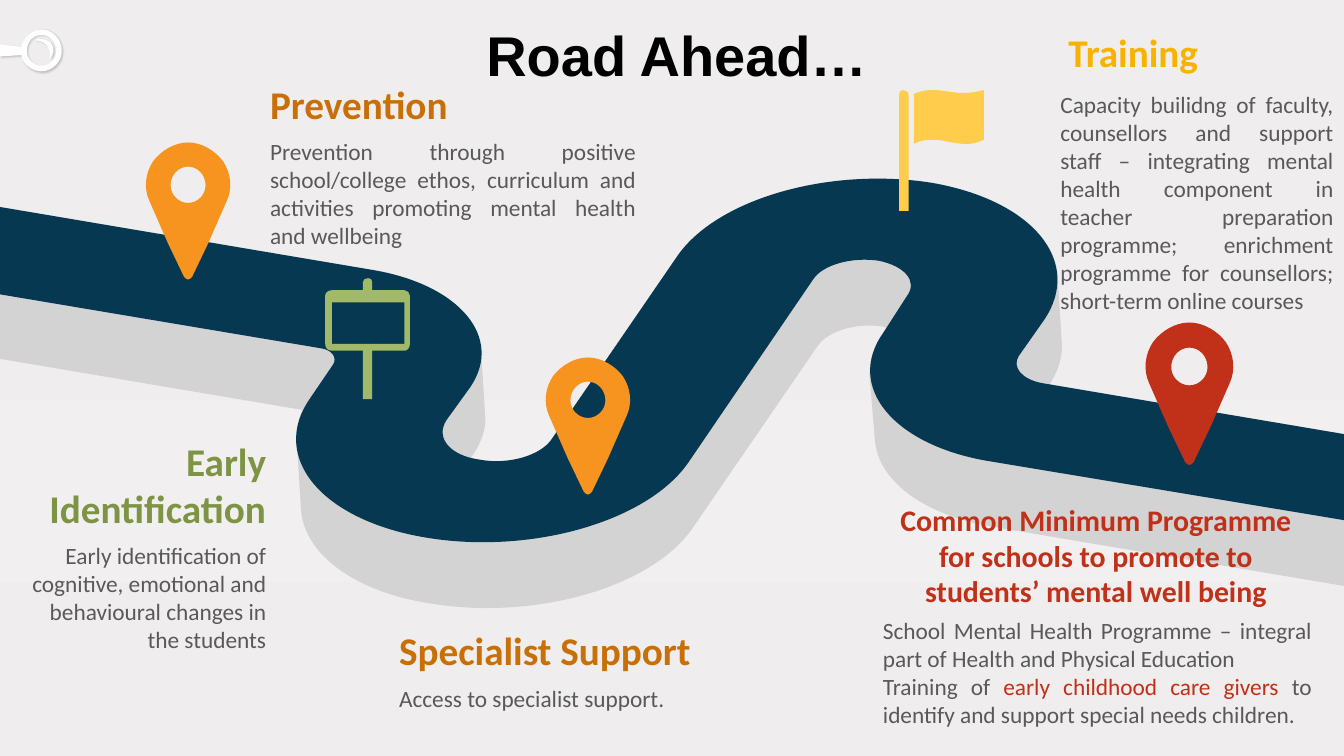
from dataclasses import dataclass

from pptx import Presentation
from pptx.dml.color import RGBColor
from pptx.enum.text import MSO_ANCHOR, PP_ALIGN
from pptx.oxml import parse_xml
from pptx.oxml.ns import nsdecls, qn
from pptx.util import Pt

COLOURS = {
    "road": "063951", "road_side": "D3D3D3", "orange": "F7931F", "red": "C13018",
    "sign": "A2B969", "flag": "FFCC4C", "white": "FFFFFF", "black": "000000",
    "brown": "C96F07", "yellow": "F8B200", "green": "7E9445", "body": "595959",
    "key_shadow": "808080",
}
BACKDROP = [(0, "EFEDEE"), (53, "F1EFF0"), (77, "EFEDEE"), (100, "EFEBEC")]
GRID = Pt(0.72)  # outlines are drawn on a grid of 0.72 points
HEADING_SIZE, BODY_SIZE = 21, 12.5

# An outline is a list of contours; a contour is a start point followed by
# lines (x, y) and Bezier curves (x1, y1, x2, y2, x, y).
Contour = list[tuple[float, ...]]

ROAD_SIDE: list[Contour] = [[
    (1000, 323), (781, 286), (788, 275, 791, 264, 790, 254), (787, 205),
    (785, 174, 750, 146, 693, 136), (618, 124, 532, 148, 503, 192), (412, 326),
    (403, 339, 379, 346, 357, 342), (355, 342, 352, 341, 350, 341), (353, 337),
    (359, 327, 362, 318, 361, 309), (358, 260), (356, 233, 326, 209, 278, 201),
    (0, 154), (0, 267), (225, 305), (221, 314, 220, 322, 221, 330), (224, 379),
    (226, 411, 262, 440, 320, 449), (398, 462, 486, 437, 516, 392), (608, 258),
    (616, 246, 637, 240, 657, 243), (658, 244, 659, 244, 660, 244), (657, 248),
    (650, 258, 647, 269, 647, 279), (651, 327), (653, 357, 686, 383, 739, 392),
    (1000, 436),
]]
ROAD: list[Contour] = [[
    (1000, 323), (775, 285), (760, 282, 753, 273, 758, 265), (777, 238),
    (806, 195, 769, 149, 693, 136), (617, 124, 532, 148, 503, 192), (411, 326),
    (403, 339, 378, 346, 357, 342), (335, 339, 324, 326, 332, 313), (350, 288),
    (375, 251, 342, 212, 278, 201), (0, 154), (0, 219), (238, 259),
    (247, 260, 251, 266, 248, 271), (231, 296), (200, 340, 239, 387, 317, 400),
    (395, 413, 483, 388, 513, 343), (605, 208), (612, 197, 634, 191, 654, 194),
    (673, 198, 683, 209, 675, 220), (657, 248), (629, 288, 665, 331, 735, 343),
    (1000, 387),
]]
PIN: list[Contour] = [
    [(0, 45), (-7, 45, -13, 39, -13, 32), (-13, 24, -7, 18, 0, 18),
     (7, 18, 13, 24, 13, 32), (13, 39, 7, 45, 0, 45)],
    [(0, 0), (-10, 0, -20, 6, -26, 14), (-32, 23, -33, 34, -29, 43), (-15, 75),
     (-3, 100), (-2, 101, -1, 102, 0, 102), (1, 102, 2, 101, 3, 100), (15, 75),
     (29, 43), (33, 34, 32, 23, 26, 14), (20, 6, 10, 0, 0, 0)],
]
SIGN: list[Contour] = [
    [(301, 256), (247, 256), (247, 225), (301, 225)],
    [(301, 216), (277, 216), (277, 210), (277, 208, 276, 207, 274, 207),
     (272, 207, 270, 208, 270, 210), (270, 216), (247, 216),
     (244, 216, 242, 218, 242, 220), (242, 256), (242, 259, 244, 261, 247, 261),
     (270, 261), (270, 297), (277, 297), (277, 261), (301, 261),
     (303, 261, 305, 259, 305, 256), (305, 220), (305, 218, 303, 216, 301, 216)],
]
FLAG_POLE: list[Contour] = [[
    (672, 67), (670, 67, 669, 69, 669, 70), (669, 157), (676, 157), (676, 70),
    (676, 69, 674, 67, 672, 67),
]]
FLAG_CLOTH: list[Contour] = [[
    (694, 67), (685, 67, 680, 70, 680, 70), (680, 107), (680, 107, 684, 104, 694, 104),
    (706, 104, 718, 111, 732, 104), (732, 67), (714, 72, 706, 67, 694, 67),
]]
KEY: list[Contour] = [
    [(30, 29), (33, 29, 36, 30, 38, 32), (41, 36, 40, 41, 37, 44),
     (38, 41, 37, 37, 35, 34), (33, 31, 29, 30, 26, 30), (27, 29, 29, 29, 30, 29)],
    [(31, 26), (25, 26, 20, 31, 20, 38), (20, 44, 25, 49, 31, 49),
     (37, 49, 42, 44, 42, 38), (42, 31, 37, 26, 31, 26)],
    [(31, 22), (39, 22, 46, 29, 46, 38), (46, 46, 39, 53, 31, 53),
     (24, 53, 17, 48, 16, 41), (0, 42), (0, 33), (16, 35), (17, 28, 24, 22, 31, 22)],
]


@dataclass
class Span:
    text: str
    colour: str = "body"


@dataclass
class TextBlock:
    left: float
    top: float
    width: float
    height: float
    paragraphs: list[list[Span]]
    align: PP_ALIGN = PP_ALIGN.LEFT
    anchor: MSO_ANCHOR = MSO_ANCHOR.TOP
    size: float = BODY_SIZE
    bold: bool = False
    font: str = "Calibri"
    line_spacing: float = 1.0
    insets: tuple[float, float] = (0, 3.6)  # left, top


def heading(left: float, top: float, width: float, height: float, text: str, colour: str,
            align: PP_ALIGN = PP_ALIGN.LEFT, size: float = HEADING_SIZE) -> TextBlock:
    return TextBlock(left, top, width, height, [[Span(text, colour)]], align,
                     MSO_ANCHOR.BOTTOM, size, True)


def bend_curves(shape, outline: list[Contour]) -> None:
    """Merge the three line segments of each curve into one Bezier segment."""
    track = shape._element.spPr.find(".//" + qn("a:path"))
    segments = iter(list(track))
    for contour in outline:
        next(segments)  # move to the start
        for step in contour[1:]:
            segment = next(segments)
            if len(step) == 6:
                curve = parse_xml(f'<a:cubicBezTo {nsdecls("a")}/>')
                segment.addprevious(curve)
                for line in (segment, next(segments), next(segments)):
                    curve.append(line[0])
                    track.remove(line)
        next(segments)  # close


def draw_outline(page, outline: list[Contour], colour: str, left: float = 0,
                 top: float = 0, scale: float = 1):
    builder = None
    for contour in outline:
        points = [((left + step[i] * scale) * GRID, (top + step[i + 1] * scale) * GRID)
                  for step in contour for i in range(0, len(step), 2)]
        if builder is None:
            builder = page.shapes.build_freeform(*points[0], scale=1.0)
        else:
            builder.move_to(*points[0])
        builder.add_line_segments(points[1:], close=True)
    shape = builder.convert_to_shape()
    bend_curves(shape, outline)
    shape.shadow.inherit = False
    shape.fill.solid()
    shape.fill.fore_color.rgb = RGBColor.from_string(COLOURS[colour])
    shape.line.fill.background()
    return shape


def draw_text(page, block: TextBlock) -> None:
    box = page.shapes.add_textbox(Pt(block.left), Pt(block.top), Pt(block.width), Pt(block.height))
    frame = box.text_frame
    frame.word_wrap = True
    frame.vertical_anchor = block.anchor
    frame.margin_left, frame.margin_top = (Pt(inset) for inset in block.insets)
    frame.margin_right, frame.margin_bottom = Pt(0), Pt(3.6)
    for index, spans in enumerate(block.paragraphs):
        para = frame.add_paragraph() if index else frame.paragraphs[0]
        para.alignment = block.align
        para.line_spacing = block.line_spacing
        for span in spans:
            run = para.add_run()
            run.text = span.text
            run.font.name, run.font.size, run.font.bold = block.font, Pt(block.size), block.bold
            run.font.color.rgb = RGBColor.from_string(COLOURS[span.colour])


def paint_backdrop(page) -> None:
    stops = "".join(f'<a:gs pos="{place * 1000}"><a:srgbClr val="{colour}"/></a:gs>'
                    for place, colour in BACKDROP)
    page._element.cSld.insert(0, parse_xml(
        f'<p:bg {nsdecls("p", "a")}><p:bgPr><a:gradFill><a:gsLst>{stops}</a:gsLst>'
        '<a:lin ang="5400000" scaled="0"/></a:gradFill><a:effectLst/></p:bgPr></p:bg>'))


def add_shadow(shape, colour: str) -> None:
    shape._element.spPr.find(qn("a:effectLst")).append(parse_xml(
        f'<a:outerShdw {nsdecls("a")} blurRad="{Pt(1)}" dist="{Pt(1)}" dir="2700000">'
        f'<a:srgbClr val="{COLOURS[colour]}"><a:alpha val="40000"/></a:srgbClr></a:outerShdw>'))


JUSTIFY, RIGHT, CENTER = PP_ALIGN.JUSTIFY, PP_ALIGN.RIGHT, PP_ALIGN.CENTER
TEXTS = [
    TextBlock(49.7, 9.4, 620.6, 43.9, [[Span("Road Ahead…", "black")]], CENTER,
              MSO_ANCHOR.MIDDLE, 30, True, "Arial", 0.9, (5, 2.9)),
    heading(144.7, 39.6, 195.8, 32.4, "Prevention", "brown"),
    TextBlock(144.7, 69.8, 195.8, 67.7, [[Span(
        "Prevention through positive school/college ethos, curriculum and activities "
        "promoting mental health and wellbeing")]], JUSTIFY),
    heading(572.4, 11.5, 147.6, 32.4, "Training", "yellow"),
    TextBlock(568.1, 44.6, 146.2, 128.2, [[Span(
        "Capacity builidng of faculty, counsellors and support staff – integrating mental "
        "health component in teacher preparation programme; enrichment programme for "
        "counsellors; short-term online courses")]], JUSTIFY),
    heading(17.3, 229.7, 125.3, 58.3, "Early Identification", "green", RIGHT),
    TextBlock(17.3, 286.6, 125.3, 67.7, [[Span(
        "Early identification of cognitive, emotional and  behavioural changes in the "
        "students")]], RIGHT),
    heading(472.3, 264.2, 229.7, 65.5, "Common Minimum Programme for schools to promote to "
            "students’ mental well being", "red", CENTER, 16),
    TextBlock(473, 313.2, 229.7, 94.3, [
        [Span("School Mental Health Programme – integral part of Health and Physical Education")],
        [Span("Training of "), Span("early childhood care givers ", "red"),
         Span("to identify and support special needs children.")],
    ], JUSTIFY, insets=(0, 17)),
    heading(213.8, 331.9, 237.6, 32.4, "Specialist Support", "brown"),
    TextBlock(213.8, 362.9, 195.8, 22.3, [[Span("Access to specialist support.")]], JUSTIFY),
]


def main() -> None:
    deck = Presentation()
    deck.slide_width, deck.slide_height = Pt(720), Pt(405)
    page = deck.slides.add_slide(deck.slide_layouts[6])
    paint_backdrop(page)

    # Key ornament and road
    add_shadow(draw_outline(page, KEY, "white"), "key_shadow")
    draw_outline(page, ROAD_SIDE, "road_side")
    draw_outline(page, ROAD, "road")

    # Markers along the road
    draw_outline(page, SIGN, "sign")
    for left, top, scale, colour in [(140, 106, 1, "orange"), (437.5, 266, 1, "orange"),
                                     (885, 240, 1.04, "red")]:
        draw_outline(page, PIN, colour, left, top, scale)
    draw_outline(page, FLAG_POLE, "flag")
    draw_outline(page, FLAG_CLOTH, "flag")

    # Title, headings and descriptions
    for block in TEXTS:
        draw_text(page, block)
    deck.save("out.pptx")


if __name__ == "__main__":
    main()
